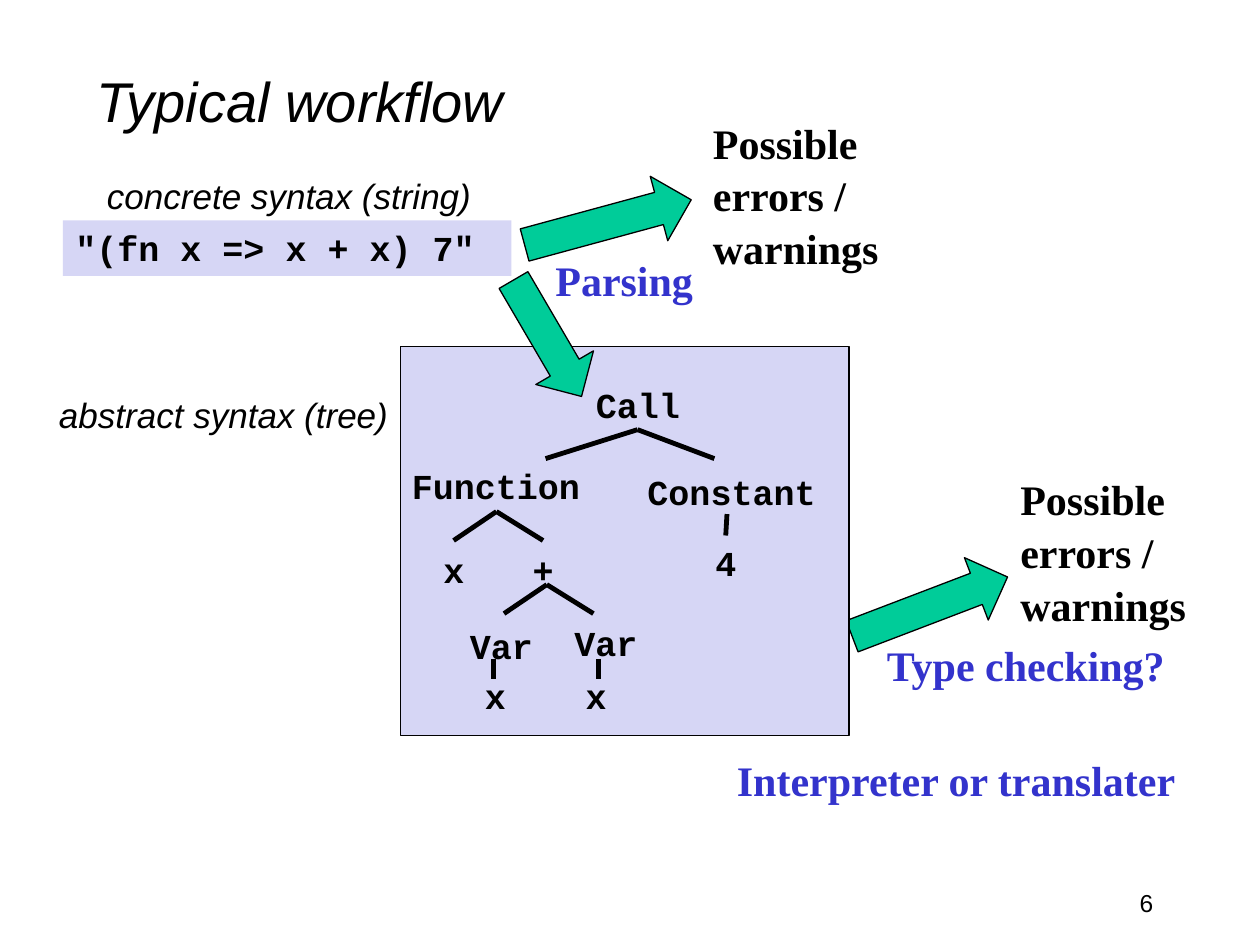
"""Build the slide that follows a program from parsing to interpretation."""
from pptx import Presentation, util as u
from pptx.dml.color import RGBColor
from pptx.enum import shapes, text
from pptx.oxml.ns import qn
from lxml import etree

THEME = {
    "black": RGBColor.from_string("000000"),
    "blue": RGBColor.from_string("3333CC"),
    "panel": RGBColor.from_string("D6D6F5"),
    "arrow": RGBColor.from_string("00CC99"),
    "outline": 0.75,
    "branch": 2.75,
    "leading": 1.05,
}
STYLES = {
    "title": {"font": "Arial", "size": 32, "italic": True, "color": "black"},
    "number": {"font": "Arial", "size": 14, "color": "black"},
    "caption": {"font": "Arial", "size": 20, "italic": True, "color": "black"},
    "code": {"font": "Courier New", "size": 20, "bold": True, "color": "black"},
    "stage": {"font": "Times New Roman", "size": 24, "bold": True, "color": "blue"},
    "result": {"font": "Times New Roman", "size": 24, "bold": True, "color": "black"},
}
TITLE = ("Typical workflow", 0.67, 0.17, 8.5, 1.25)
PAGE_NUMBER = ("6", 7.17, 7, 2.08, 0.5)
SOURCE_CODE = ('"(fn x => x + x) 7"', 0.5, 1.75, 3.56, 0.44)
TREE_PANEL = (3.18, 2.75, 3.56, 3.09)
ERRORS = "Possible\nerrors /\nwarnings"
LABELS = [
    ("stage", "Parsing", 4.31, 1.95, 1.3, 0.5),
    ("stage", "Type checking?", 6.94, 5.01, 2.43, 0.5),
    ("stage", "Interpreter or translater", 5.75, 5.92, 3.9, 0.5),
    ("result", ERRORS, 8, 3.69, 1.53, 1.31),
    ("result", ERRORS, 5.56, 0.86, 1.53, 1.31),
    ("caption", "concrete syntax (string)", 0.75, 1.32, 3.11, 0.44),
    ("caption", "abstract syntax (tree)", 0.37, 3.06, 2.83, 0.44),
]
NODE_HEIGHT = 0.44
NODE_WIDTHS = {1: 0.37, 3: 0.71, 4: 0.88, 8: 1.55}
NODES = [
    ("Call", 4.63, 2.98),
    ("Function", 3.17, 3.62), ("Constant", 5.04, 3.67),
    ("x", 3.42, 4.29), ("+", 4.13, 4.29), ("4", 5.58, 4.23),
    ("Var", 3.63, 4.89), ("Var", 4.46, 4.87),
    ("x", 3.75, 5.29), ("x", 4.55, 5.29),
]
BRANCHES = [
    ((5.06, 3.41), [(4.33, 3.64), (5.67, 3.64)]),
    ((3.94, 4.06), [(3.6, 4.29), (4.31, 4.29)]),
    ((5.77, 4.08), [(5.76, 4.25)]),
    ((4.34, 4.64), [(4, 4.87), (4.71, 4.87)]),
    ((3.92, 5.23), [(3.92, 5.39)]),
    ((4.75, 5.23), [(4.75, 5.39)]),
]
CHECKING_ARROW = (6.72, 4.55, 1.32, 0.53, 339.1)
ERROR_ARROW = (4.14, 1.5, 1.37, 0.53, 344.8)
PARSING_ARROW = (3.81, 2.42, 1.07, 0.53, 59.7)


def inches(*values):
    return [u.Inches(value) for value in values]


def write(box, words, style, align=text.PP_ALIGN.LEFT, leading=1.0):
    look = STYLES[style]
    box.text_frame.text = words
    for para in box.text_frame.paragraphs:
        para.alignment = align
        para.line_spacing = leading
        for span in para.runs:
            span.font.name = look["font"]
            span.font.size = u.Pt(look["size"])
            span.font.bold = look.get("bold", False)
            span.font.italic = look.get("italic", False)
            span.font.color.rgb = THEME[look["color"]]


def add_text(page, style, words, *place, **options):
    box = page.shapes.add_textbox(*inches(*place))
    box.text_frame.word_wrap = True
    write(box, words, style, **options)
    return box


def add_label(page, style, words, *place):
    box = add_text(page, style, words, *place, leading=THEME["leading"])
    box.text_frame.word_wrap = False
    box.text_frame.auto_size = text.MSO_AUTO_SIZE.SHAPE_TO_FIT_TEXT


def add_block(page, preset, fill, *place, outlined=True):
    block = page.shapes.add_shape(preset, *inches(*place))
    block.shadow.inherit = False
    block.fill.solid()
    block.fill.fore_color.rgb = THEME[fill]
    if outlined:
        block.line.color.rgb = THEME["black"]
        block.line.width = u.Pt(THEME["outline"])
    else:
        block.line.fill.background()
    return block


def add_arrow(page, left, top, width, height, angle):
    arrow = add_block(page, shapes.MSO_SHAPE.RIGHT_ARROW, "arrow", left, top, width, height)
    arrow.rotation = angle


def add_branch(page, parent, child):
    branch = page.shapes.add_connector(
        shapes.MSO_CONNECTOR.STRAIGHT, *inches(*parent, *child))
    branch.line.color.rgb = THEME["black"]
    branch.line.width = u.Pt(THEME["branch"])
    etree.SubElement(branch._element.spPr, qn("a:effectLst"))


def add_tree(page):
    add_block(page, shapes.MSO_SHAPE.RECTANGLE, "panel", *TREE_PANEL)
    for words, left, top in NODES:
        add_label(page, "code", words, left, top, NODE_WIDTHS[len(words)], NODE_HEIGHT)
    for parent, children in BRANCHES:
        for child in children:
            add_branch(page, parent, child)


def add_source_code(page):
    words, *place = SOURCE_CODE
    block = add_block(page, shapes.MSO_SHAPE.RECTANGLE, "panel", *place, outlined=False)
    block.text_frame.vertical_anchor = text.MSO_ANCHOR.TOP
    write(block, words, "code")
    block.text_frame.paragraphs[0].space_before = u.Pt(4)


def main():
    deck = Presentation()
    deck.slide_width, deck.slide_height = inches(10, 7.5)
    page = deck.slides.add_slide(deck.slide_layouts[6])
    title = add_text(page, "title", *TITLE)
    title.text_frame.vertical_anchor = text.MSO_ANCHOR.MIDDLE
    add_text(page, "number", *PAGE_NUMBER, align=text.PP_ALIGN.RIGHT)
    add_source_code(page)
    add_arrow(page, *CHECKING_ARROW)
    add_arrow(page, *ERROR_ARROW)
    for label in LABELS:
        add_label(page, *label)
    add_tree(page)
    add_arrow(page, *PARSING_ARROW)
    deck.save("out.pptx")


if __name__ == "__main__":
    main()
